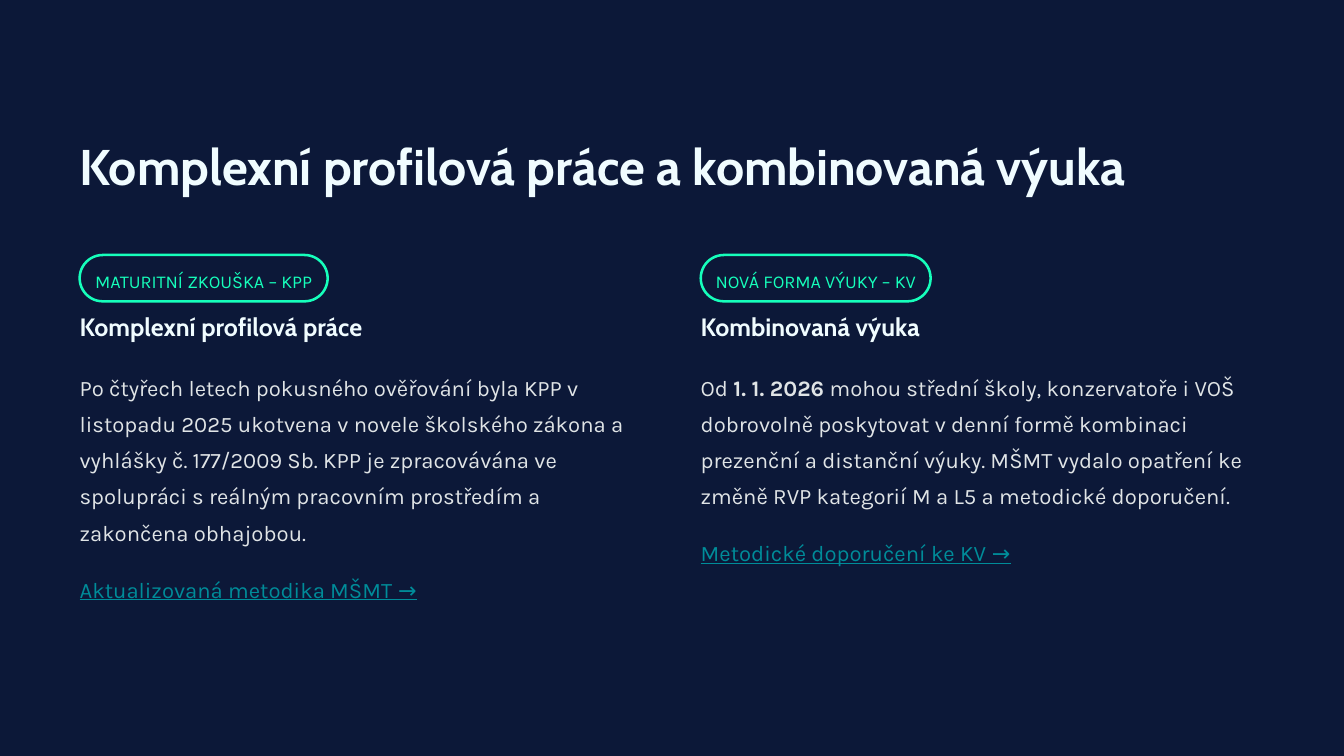
from pptx import Presentation
from pptx.dml.color import RGBColor
from pptx.enum.shapes import MSO_SHAPE as Shape
from pptx.enum.text import MSO_ANCHOR as Anchor, MSO_AUTO_SIZE as AutoSize, PP_ALIGN as Align
from pptx.util import Inches, Pt

NAVY, ICE, MINT, GREY, TEAL = "0C1838", "F0FCFF", "16FFBB", "E0E4E6", "008C99"


def color(hex_value):
    return RGBColor.from_string(hex_value)


def write(shape, text, font="Karla", size=15.8, ink=GREY, spacing=25.8, bold=False,
          underline=None, wrap=False, align=Align.LEFT, anchor=Anchor.TOP):
    """Fill a shape with one paragraph; parts between ** marks are bold."""
    frame = shape.text_frame
    frame.auto_size = AutoSize.NONE
    frame.word_wrap = wrap
    frame.vertical_anchor = anchor
    frame.margin_left = frame.margin_top = frame.margin_right = frame.margin_bottom = 0
    paragraph = frame.paragraphs[0]
    paragraph.alignment = align
    paragraph.line_spacing = Pt(spacing)
    paragraph.space_before = Pt(0)
    for index, part in enumerate(text.split("**")):
        run = paragraph.add_run()
        run.text = part
        run.font.name = font
        run.font.size = Pt(size)
        run.font.bold = bold or index % 2 == 1
        run.font.underline = underline
        run.font.color.rgb = color(ink)


prs = Presentation()
prs.slide_width, prs.slide_height = Inches(13.33), Inches(7.5)
slide = prs.slides.add_slide(prs.slide_layouts[5])
slide.background.fill.solid()
slide.background.fill.fore_color.rgb = color(NAVY)

# Title
title = slide.shapes.title
title.left, title.top, title.width, title.height = map(Inches, (0.79, 1.31, 11.35, 0.62))
write(title, "Komplexní profilová práce a kombinovaná výuka",
      font="Cabin", size=35.8, ink=ICE, spacing=45, bold=True)

# Two topics: left, tag width, tag, heading, description, its line count, link label
topics = [
    (0.79, 2.46, "MATURITNÍ ZKOUŠKA – KPP", "Komplexní profilová práce",
     "Po čtyřech letech pokusného ověřování byla KPP v listopadu 2025 ukotvena v novele "
     "školského zákona a vyhlášky č. 177/2009 Sb. KPP je zpracovávána ve spolupráci "
     "s reálným pracovním prostředím a zakončena obhajobou.",
     5, "Aktualizovaná metodika MŠMT →"),
    (6.95, 2.28, "NOVÁ FORMA VÝUKY – KV", "Kombinovaná výuka",
     "Od **1. 1. 2026** mohou střední školy, konzervatoře i VOŠ dobrovolně poskytovat "
     "v denní formě kombinaci prezenční a distanční výuky. MŠMT vydalo opatření ke změně "
     "RVP kategorií M a L5 a metodické doporučení.",
     4, "Metodické doporučení ke KV →"),
]
COLUMN_WIDTH, LINE_HEIGHT = 5.6, 0.36
DESCRIPTION_TOP, LINK_GAP = 3.62, 0.2

for left, tag_width, tag_text, heading_text, description_text, lines, link_text in topics:
    # Outlined tag
    tag = slide.shapes.add_shape(Shape.ROUNDED_RECTANGLE, Inches(left), Inches(2.53),
                                 Inches(tag_width), Inches(0.46))
    tag.adjustments[0] = 0.5
    tag.shadow.inherit = False
    tag.fill.background()
    tag.line.color.rgb = color(MINT)
    tag.line.width = Pt(1.8)
    write(tag, tag_text, size=12.9, ink=MINT, spacing=20.4,
          align=Align.CENTER, anchor=Anchor.MIDDLE)

    # Heading, description and link
    description_height = lines * LINE_HEIGHT
    link_top = DESCRIPTION_TOP + description_height + LINK_GAP
    for text, top, height, style in [
        (heading_text, 3.08, 0.31,
         dict(font="Cabin", size=17.9, ink=ICE, spacing=22.5, bold=True)),
        (description_text, DESCRIPTION_TOP, description_height, dict(wrap=True)),
        (link_text, link_top, LINE_HEIGHT, dict(ink=TEAL, underline=True)),
    ]:
        box = slide.shapes.add_textbox(Inches(left), Inches(top),
                                       Inches(COLUMN_WIDTH), Inches(height))
        write(box, text, **style)

prs.save("out.pptx")
